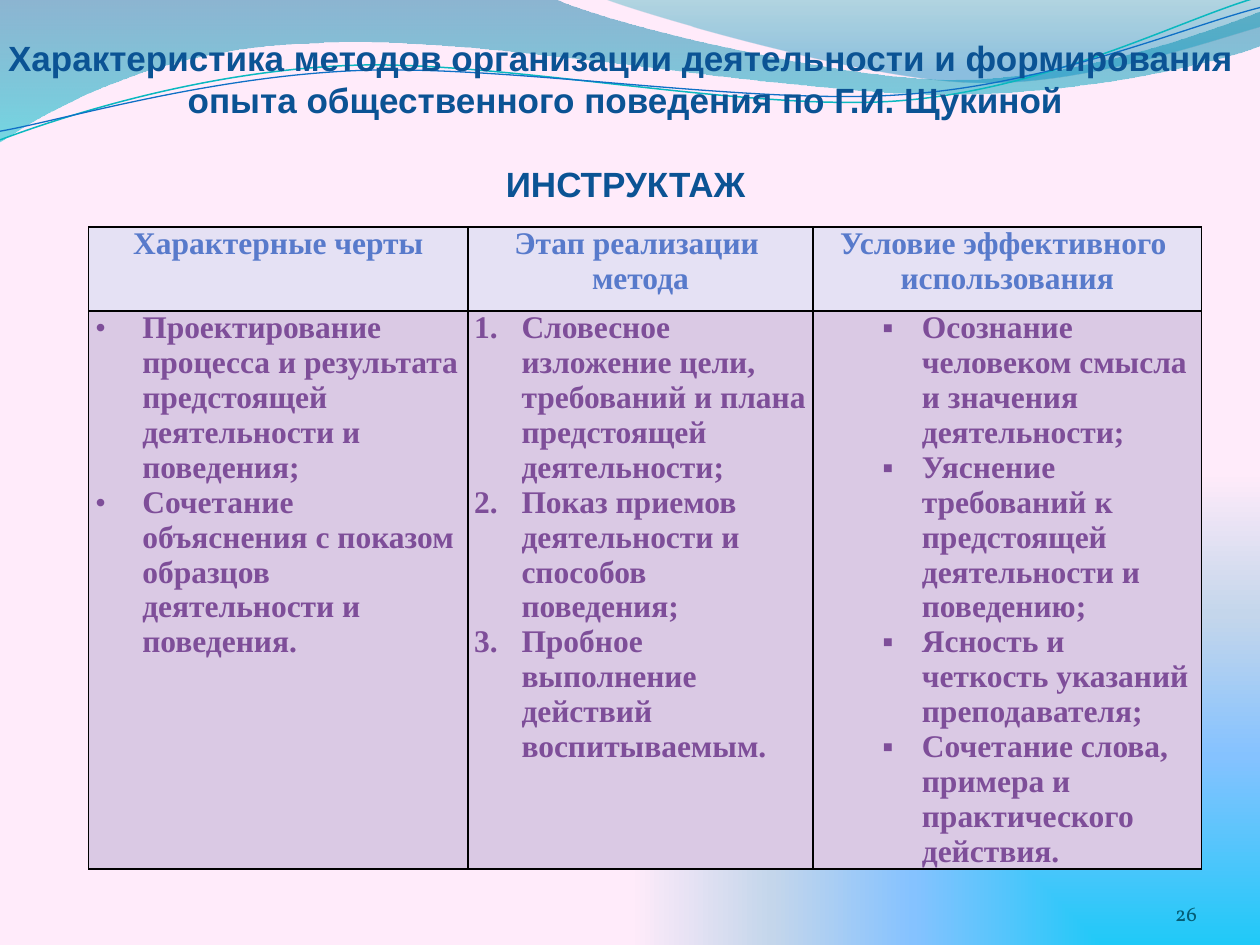
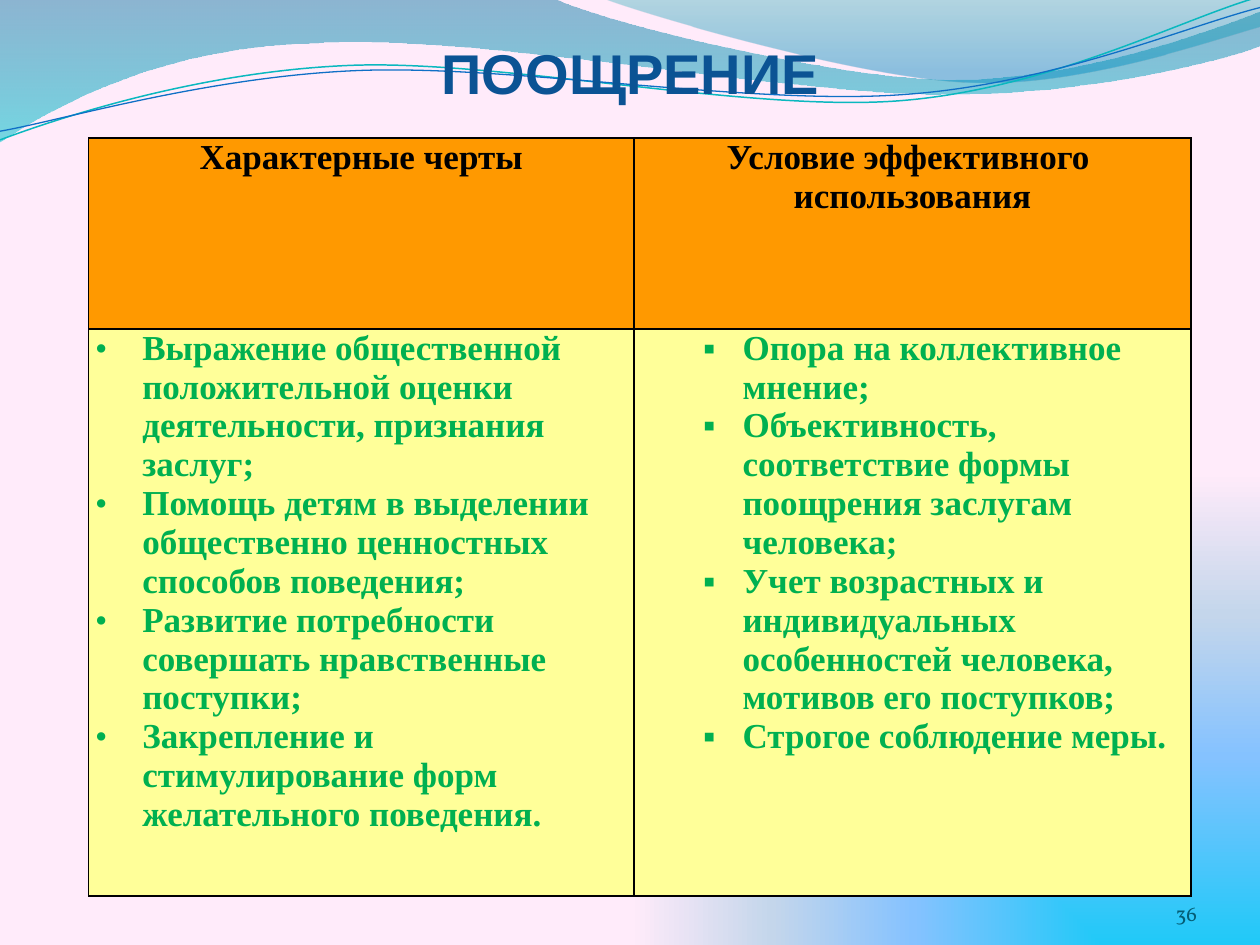
from dataclasses import dataclass
from typing import NamedTuple, Optional

from lxml.etree import SubElement
from pptx import Presentation
from pptx.dml.color import RGBColor
from pptx.enum.text import MSO_ANCHOR, PP_ALIGN
from pptx.oxml import parse_xml
from pptx.oxml.ns import nsdecls, qn
from pptx.util import Pt

TITLE_COLOR = "0B5394"
NUMBER_COLOR = "045D75"
BORDER_COLOR = "000000"
TITLE_FONT, TABLE_FONT, NUMBER_FONT = "Arial", "Times New Roman", "Vollkorn"
TABLE_LEFT = 50.7
CELL_MARGIN = 3.6
LINE_ROTATION = 357.3


class Stop(NamedTuple):
    position: int
    color: str
    opacity: int = 100


class Wave(NamedTuple):
    """Segments hold x, y for a line, or two control points and an end for a curve."""
    start: tuple[float, float]
    segments: list[tuple[float, ...]]
    stops: Optional[list[Stop]] = None
    line_color: str = ""
    line_width: float = 0


class ListStyle(NamedTuple):
    bullet: str
    level: int
    left: float
    hanging: float


class Column(NamedTuple):
    width: float
    heading: list[str]
    items: list[str]
    list_style: ListStyle


class CellStyle(NamedTuple):
    fill: str
    text: str


@dataclass
class Title:
    lines: list[str]
    size: float
    left: float
    top: float
    width: float
    height: float
    bottom_margin: float
    gap_before_last: float = 0


@dataclass
class MethodSlide:
    title: Title
    table_top: float
    row_heights: tuple[float, float]
    font_size: float
    heading_style: CellStyle
    body_style: CellStyle
    columns: list[Column]
    number: str


BACKGROUND = [Stop(0, "20C9F8"), Stop(40, "85C2FF"), Stop(70, "C4D6EB"), Stop(100, "FFEBFA")]
CORNER_PATH = '<a:path path="rect"><a:fillToRect l="100000" t="100000"/></a:path>'
DOWNWARD = '<a:lin ang="5400000" scaled="0"/>'

WAVES = [
    Wave((0, 0), [
        (316.8, -0.7),
        (342.7, 12.2, 478.1, 45.4, 545.8, 45.4),
        (614.2, 45.4, 689.8, 18.7, 720, 6.5),
        (720.7, 25.9),
        (707.8, 31.7, 626.4, 54.7, 537.1, 54),
        (447.8, 54, 275, 20.2, 185, 24.5),
        (92.9, 25.9, 33.1, 59.8, -0.7, 81.4),
        (0, 0),
    ], stops=[Stop(0, "0074A1", 45), Stop(100, "00C6CF", 55)]),
    Wave((344.9, -0.7), [
        (366.5, 7.9, 491, 44.6, 553.7, 46.8),
        (616.3, 49.7, 691.9, 23, 720, 15.1),
        (720, 0),
        (344.9, -0.7),
    ], stops=[Stop(0, "00A1A9", 30), Stop(80, "008BBF", 45)]),
    Wave((-1.4, 63), [
        (33.8, 51.7, 114.1, 29.4, 199.8, 29.9),
        (284.9, 30.3, 425.8, 67.3, 512.4, 64.9),
        (599, 62.4, 676.5, 25.7, 720.2, 15.5),
    ], line_color="0AB8BF", line_width=0.85),
    Wave((-1.1, 58), [
        (32.9, 53.8, 118.3, 32.5, 204.1, 33),
        (290.6, 33.4, 428.9, 63.8, 515.5, 61.4),
        (600.6, 59.6, 678.4, 30.1, 721.4, 21.3),
    ], line_color="0F6FC6", line_width=0.75),
]

DOTS = ListStyle("•", 0, 27, 27)
NUMBERS = ListStyle("1.", 0, 27, 27)
SQUARES = ListStyle("▪", 1, 58.5, 22.5)

FEATURES = ["Характерные черты"]
STAGES = ["Этап реализации ", "метода"]
CONDITIONS = ["Условие эффективного ", "использования"]

SLIDES = [
    MethodSlide(
        title=Title([
            "Характеристика методов организации деятельности и формирования ",
            "опыта общественного поведения по Г.И. Щукиной",
            "ИНСТРУКТАЖ",
        ], size=20, left=-5, top=16.6, width=725, height=126, bottom_margin=25.2,
            gap_before_last=24),
        table_top=129.6,
        row_heights=(48, 295),
        font_size=18,
        heading_style=CellStyle("E5E1F4", "587ACB"),
        body_style=CellStyle("DAC9E4", "7E4E99"),
        columns=[
            Column(216.7, FEATURES, [
                "Проектирование процесса и результата предстоящей деятельности и поведения;",
                "Сочетание объяснения с показом образцов деятельности и поведения.",
            ], DOTS),
            Column(197.3, STAGES, [
                "Словесное изложение цели, требований и плана предстоящей деятельности;",
                "Показ приемов деятельности и способов поведения;",
                "Пробное выполнение действий воспитываемым.",
            ], NUMBERS),
            Column(221.8, CONDITIONS, [
                "Осознание человеком смысла и значения деятельности;",
                "Уяснение требований к предстоящей деятельности и поведению;",
                "Ясность и четкость указаний преподавателя;",
                "Сочетание слова, примера и практического действия.",
            ], SQUARES),
        ],
        number="26",
    ),
    MethodSlide(
        title=Title(["ПООЩРЕНИЕ"], size=32, left=244, top=-21.6, width=232.6, height=123.8,
                    bottom_margin=2),
        table_top=78.8,
        row_heights=(109.2, 324),
        font_size=20,
        heading_style=CellStyle("FF9900", "000000"),
        body_style=CellStyle("FFFF99", "00B050"),
        columns=[
            Column(311.5, FEATURES, [
                "Выражение общественной положительной оценки деятельности, признания заслуг;",
                "Помощь детям в выделении общественно ценностных способов поведения;",
                "Развитие потребности совершать нравственные поступки;",
                "Закрепление и стимулирование форм желательного поведения.",
            ], DOTS),
            Column(318.5, CONDITIONS, [
                "Опора на коллективное мнение;",
                "Объективность, соответствие формы поощрения заслугам человека;",
                "Учет возрастных и индивидуальных особенностей человека, мотивов его поступков;",
                "Строгое соблюдение меры.",
            ], SQUARES),
        ],
        number="36",
    ),
]


def rgb(color: str) -> RGBColor:
    return RGBColor.from_string(color)


def set_gradient(fill, element, stops: list[Stop], direction: str) -> None:
    """Give the fill, found inside element, a gradient of any number of stops."""
    fill.solid()
    fill.fore_color.rgb = rgb(stops[0].color)
    stop_xml = "".join(
        f'<a:gs pos="{stop.position * 1000}"><a:srgbClr val="{stop.color}">'
        f'<a:alpha val="{stop.opacity * 1000}"/></a:srgbClr></a:gs>'
        for stop in stops)
    gradient = parse_xml(f'<a:gradFill {nsdecls("a")} rotWithShape="1">'
                         f'<a:gsLst>{stop_xml}</a:gsLst>{direction}</a:gradFill>')
    solid = element.find(".//" + qn("a:solidFill"))
    solid.getparent().replace(solid, gradient)


def bend_segments(shape, segments: list[tuple[float, ...]]) -> None:
    """Merge the three straight pieces that stand for each curve into one Bézier curve."""
    pieces = iter(shape.element.findall(".//" + qn("a:lnTo")))
    for segment in segments:
        first, *others = [next(pieces) for _ in range(len(segment) // 2)]
        if others:
            curve = parse_xml(f'<a:cubicBezTo {nsdecls("a")}/>')
            first.addprevious(curve)
            for piece in (first, *others):
                curve.append(piece[0])
                piece.getparent().remove(piece)


def draw_wave(slide, wave: Wave) -> None:
    builder = slide.shapes.build_freeform(Pt(wave.start[0]), Pt(wave.start[1]))
    points = [(Pt(x), Pt(y)) for segment in wave.segments
              for x, y in zip(segment[::2], segment[1::2])]
    builder.add_line_segments(points, close=bool(wave.stops))
    shape = builder.convert_to_shape()
    bend_segments(shape, wave.segments)
    shape.shadow.inherit = False
    if wave.stops:
        set_gradient(shape.fill, shape.element, wave.stops, DOWNWARD)
        shape.line.fill.background()
    else:
        shape.rotation = LINE_ROTATION
        shape.fill.background()
        shape.line.color.rgb = rgb(wave.line_color)
        shape.line.width = Pt(wave.line_width)


def set_font(paragraph, name: str, size: float, color: str, bold: bool = True) -> None:
    font = paragraph.font
    font.name, font.size, font.bold = name, Pt(size), bold
    font.color.rgb = rgb(color)


def fill_paragraphs(text_frame, lines: list[str]):
    """Write one paragraph per line and return the paragraphs."""
    text_frame.text = "\n".join(lines)
    return text_frame.paragraphs


def draw_title(slide, title: Title) -> None:
    box = slide.shapes.add_textbox(Pt(title.left), Pt(title.top), Pt(title.width), Pt(title.height))
    box.text_frame.word_wrap = False
    box.text_frame.vertical_anchor = MSO_ANCHOR.MIDDLE
    box.text_frame.margin_bottom = Pt(title.bottom_margin)
    paragraphs = fill_paragraphs(box.text_frame, title.lines)
    for paragraph in paragraphs:
        paragraph.alignment = PP_ALIGN.CENTER
        paragraph.line_spacing = Pt(title.size * 1.2)
        set_font(paragraph, TITLE_FONT, title.size, TITLE_COLOR)
    if title.gap_before_last:
        paragraphs[-1].space_before = Pt(title.gap_before_last)


def draw_number(slide, number: str) -> None:
    box = slide.shapes.add_textbox(Pt(624), Pt(500.4), Pt(60), Pt(28.8))
    frame = box.text_frame
    frame.word_wrap = True
    frame.margin_left = frame.margin_right = frame.margin_top = frame.margin_bottom = 0
    frame.vertical_anchor = MSO_ANCHOR.BOTTOM
    paragraph = fill_paragraphs(frame, [number])[0]
    paragraph.alignment = PP_ALIGN.RIGHT
    set_font(paragraph, NUMBER_FONT, 12, NUMBER_COLOR, bold=False)


def set_bullet(paragraph, style: ListStyle) -> None:
    paragraph.level = style.level
    properties = paragraph._p.get_or_add_pPr()
    properties.set("marL", str(Pt(style.left)))
    properties.set("indent", str(-Pt(style.hanging)))
    SubElement(properties, qn("a:buFont"), typeface=TABLE_FONT)
    if style is NUMBERS:
        SubElement(properties, qn("a:buAutoNum"), type="arabicPeriod")
    else:
        SubElement(properties, qn("a:buChar"), char=style.bullet)


def fill_cell(cell, lines: list[str], style: CellStyle, font_size: float,
              list_style: Optional[ListStyle] = None) -> None:
    cell.margin_left = cell.margin_right = Pt(CELL_MARGIN)
    cell.margin_top = cell.margin_bottom = 0
    cell.fill.solid()
    cell.fill.fore_color.rgb = rgb(style.fill)
    for index, side in enumerate(("lnL", "lnR", "lnT", "lnB")):
        cell._tc.get_or_add_tcPr().insert(index, parse_xml(
            f'<a:{side} {nsdecls("a")} w="{Pt(1)}"><a:solidFill>'
            f'<a:srgbClr val="{BORDER_COLOR}"/></a:solidFill></a:{side}>'))
    for paragraph in fill_paragraphs(cell.text_frame, lines):
        if list_style:
            set_bullet(paragraph, list_style)
        else:
            paragraph.alignment = PP_ALIGN.CENTER
        set_font(paragraph, TABLE_FONT, font_size, style.text)


def draw_table(slide, content: MethodSlide) -> None:
    columns, heights = content.columns, content.row_heights
    table = slide.shapes.add_table(
        len(heights), len(columns), Pt(TABLE_LEFT), Pt(content.table_top),
        Pt(sum(column.width for column in columns)), Pt(sum(heights))).table
    table.first_row = table.horz_banding = False
    for row, height in zip(table.rows, heights):
        row.height = Pt(height)
    for index, column in enumerate(columns):
        table.columns[index].width = Pt(column.width)
        fill_cell(table.cell(0, index), column.heading, content.heading_style, content.font_size)
        fill_cell(table.cell(1, index), column.items, content.body_style, content.font_size,
                  column.list_style)


def main() -> None:
    presentation = Presentation()
    presentation.slide_width, presentation.slide_height = Pt(720), Pt(540)
    for content in SLIDES:
        slide = presentation.slides.add_slide(presentation.slide_layouts[6])
        set_gradient(slide.background.fill, slide.element, BACKGROUND, CORNER_PATH)
        for wave in WAVES:
            draw_wave(slide, wave)
        draw_table(slide, content)
        draw_title(slide, content.title)
        draw_number(slide, content.number)
    presentation.save("out.pptx")


if __name__ == "__main__":
    main()
